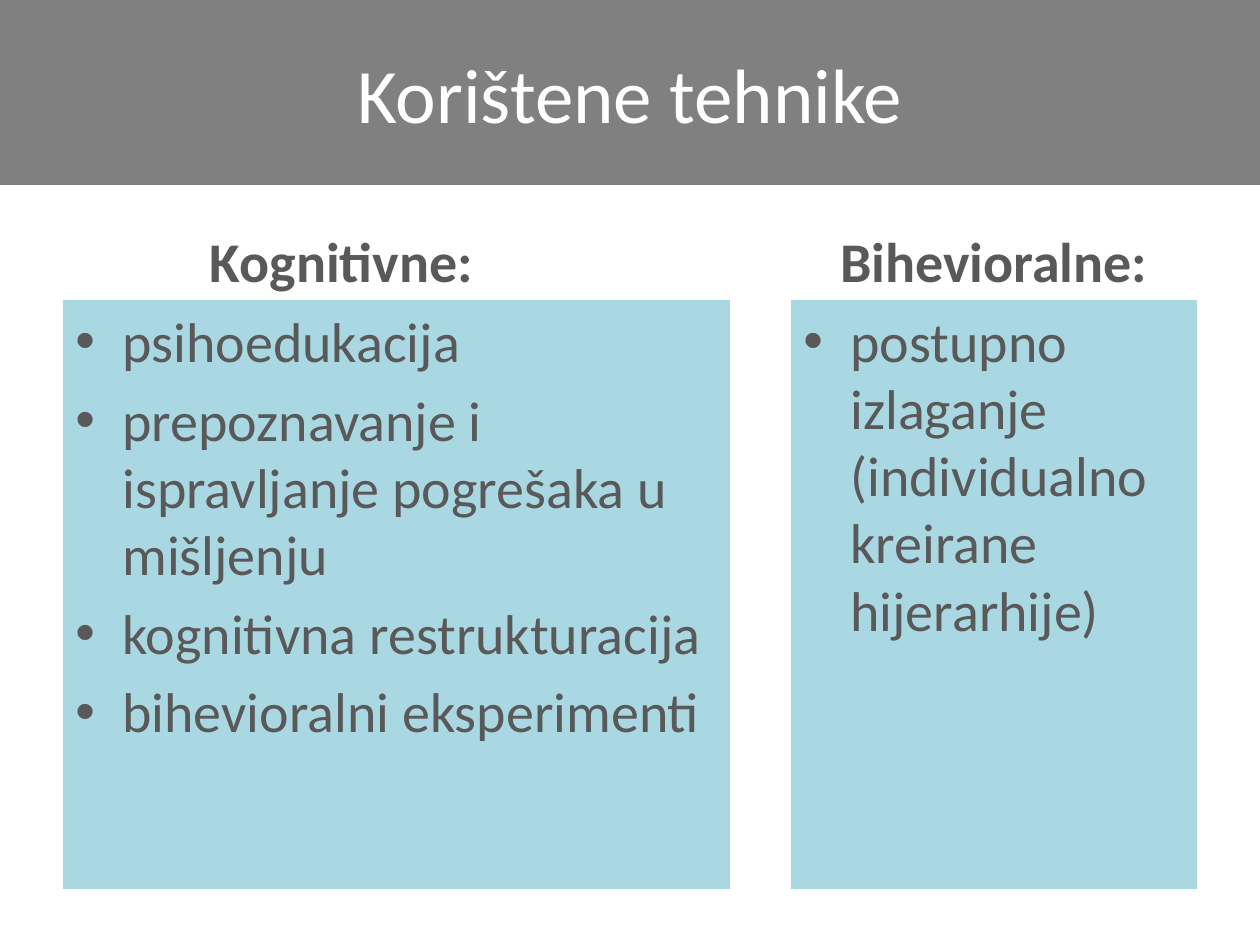
"""Build the slide on the cognitive and behavioural techniques used."""
from dataclasses import dataclass

from lxml import etree
from pptx import Presentation
from pptx import util as u
from pptx.dml.color import RGBColor
from pptx.enum import shapes, text
from pptx.oxml.ns import qn

PX = u.Inches(1) / 126
WHITE = RGBColor(0xFF, 0xFF, 0xFF)
BANNER_GREY = RGBColor(0x80, 0x80, 0x80)
TEXT_GREY = RGBColor(0x59, 0x59, 0x59)
PANEL_BLUE = RGBColor(0xA9, 0xD7, 0xE2)
FONT = "Calibri"
HEADING_TOP, HEADING_HEIGHT = 212, 88
PANEL_TOP, PANEL_HEIGHT = HEADING_TOP + HEADING_HEIGHT, 589
BULLET_INDENT = 47


@dataclass(frozen=True)
class Column:
    heading: str
    left: int
    heading_width: int
    panel_width: int
    techniques: tuple[str, ...]


COLUMNS = (
    Column("Kognitivne:", 63, 557, 667, (
        "psihoedukacija",
        "prepoznavanje i ispravljanje pogrešaka u mišljenju",
        "kognitivna restrukturacija",
        "bihevioralni eksperimenti",
    )),
    Column("Bihevioralne:", 791, 406, 406, (
        "postupno izlaganje (individualno kreirane hijerarhije)",
    )),
)


def px(length: int) -> u.Emu:
    """Turn whole pixels into EMU."""
    return u.Emu(round(length * PX))


def add_panel(slide, left: int, top: int, width: int, height: int, fill: RGBColor):
    """Add a plain filled rectangle."""
    panel = slide.shapes.add_shape(
        shapes.MSO_SHAPE.RECTANGLE, px(left), px(top), px(width), px(height))
    panel.shadow.inherit = False
    panel.fill.solid()
    panel.fill.fore_color.rgb = fill
    panel.line.fill.background()
    return panel


def write(frame, lines: tuple[str, ...], size: int, color: RGBColor,
          anchor, align, bold: bool = False) -> None:
    """Fill a text frame with one paragraph for each line."""
    frame.word_wrap = True
    frame.vertical_anchor = anchor
    frame.text = "\n".join(lines)
    for paragraph in frame.paragraphs:
        paragraph.alignment = align
        for run in paragraph.runs:
            run.font.name = FONT
            run.font.size = u.Pt(size)
            run.font.bold = bold
            run.font.color.rgb = color


def add_bullet(paragraph) -> None:
    """Give a paragraph a hanging bullet and space above."""
    paragraph.space_before = u.Pt(6.6)
    properties = paragraph._p.get_or_add_pPr()
    properties.set("marL", str(px(BULLET_INDENT)))
    properties.set("indent", str(-px(BULLET_INDENT)))
    etree.SubElement(properties, qn("a:buFont")).set("typeface", "Arial")
    etree.SubElement(properties, qn("a:buChar")).set("char", "•")


def add_column(slide, column: Column) -> None:
    """Draw a heading above its panel of techniques."""
    heading = slide.shapes.add_textbox(
        px(column.left), px(HEADING_TOP), px(column.heading_width), px(HEADING_HEIGHT))
    write(heading.text_frame, (column.heading,), 32, TEXT_GREY,
          text.MSO_ANCHOR.BOTTOM, text.PP_ALIGN.CENTER, bold=True)
    panel = add_panel(slide, column.left, PANEL_TOP, column.panel_width,
                      PANEL_HEIGHT, PANEL_BLUE)
    write(panel.text_frame, column.techniques, 32, TEXT_GREY,
          text.MSO_ANCHOR.TOP, text.PP_ALIGN.LEFT)
    for technique in panel.text_frame.paragraphs:
        add_bullet(technique)


def main() -> None:
    """Build and save the slide."""
    deck = Presentation()
    deck.slide_width, deck.slide_height = px(1260), px(945)
    slide = deck.slides.add_slide(deck.slide_layouts[6])
    banner = add_panel(slide, 0, 0, 1260, 185, BANNER_GREY)
    write(banner.text_frame, ("Korištene tehnike",), 44, WHITE,
          text.MSO_ANCHOR.MIDDLE, text.PP_ALIGN.CENTER)
    for column in COLUMNS:
        add_column(slide, column)
    deck.save("out.pptx")


if __name__ == "__main__":
    main()
